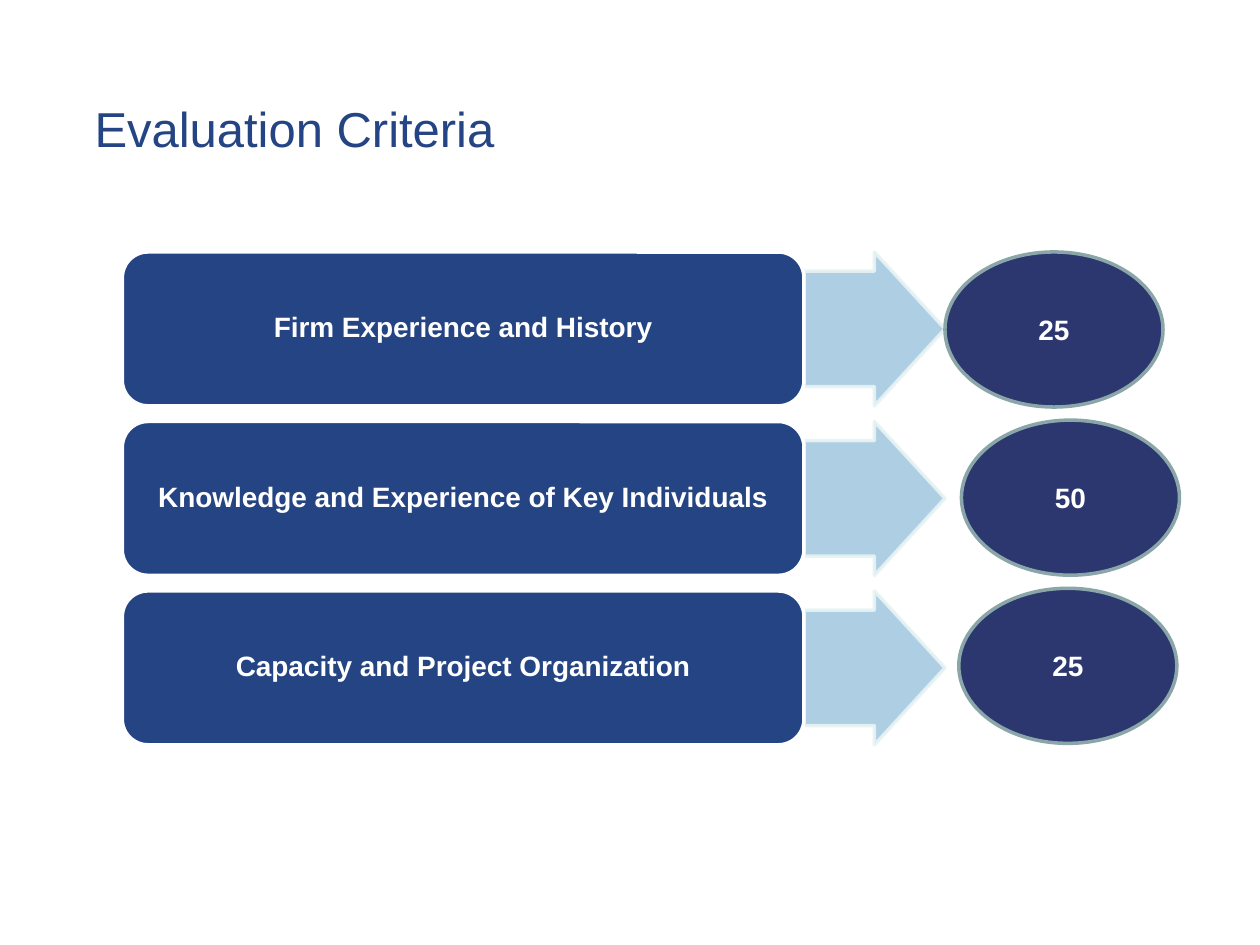
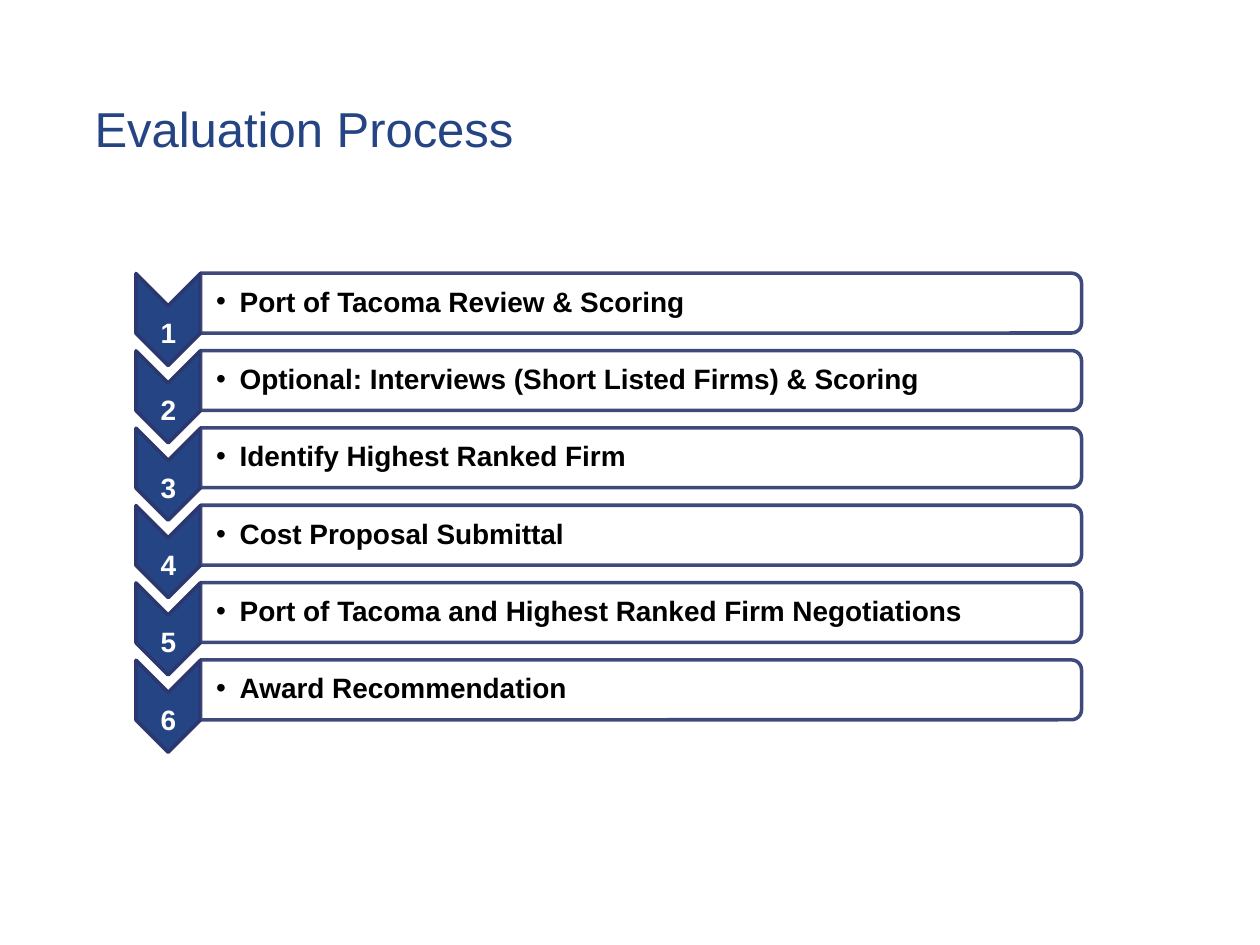
from lxml.etree import SubElement
from pptx import Presentation
from pptx.dml.color import RGBColor
from pptx.enum.shapes import MSO_SHAPE
from pptx.enum.text import MSO_ANCHOR, PP_ALIGN
from pptx.oxml.ns import qn
from pptx.util import Pt

COLORS = {
    "blue": "254484",
    "navy": "2B376E",
    "sky": "A6CAE1",
    "mist": "E7F3F4",
    "sage": "8AA6A8",
    "white": "FFFFFF",
    "black": "000000",
}
FONT = "Arial"


def add_figure(slide, preset, box, fill, line, opacity=100):
    """Draw a preset shape with a fill and a 2 pt outline."""
    figure = slide.shapes.add_shape(preset, *map(Pt, box))
    figure.shadow.inherit = False
    figure.fill.solid()
    figure.fill.fore_color.rgb = RGBColor.from_string(COLORS[fill])
    figure.line.color.rgb = RGBColor.from_string(COLORS[line])
    figure.line.width = Pt(2)
    if opacity < 100:
        for color in figure.element.spPr.iter(qn("a:srgbClr")):
            SubElement(color, qn("a:alpha"), val=str(opacity * 1000))
    return figure


def write(holder, text, color, insets, size=16, bold=True, align=PP_ALIGN.CENTER,
          anchor=MSO_ANCHOR.MIDDLE, spacing=0.9, wrap=True, bullet=False):
    """Put one formatted paragraph into a shape, text box or placeholder."""
    frame = holder.text_frame
    frame.text = text
    frame.word_wrap = wrap
    frame.vertical_anchor = anchor
    (frame.margin_left, frame.margin_top,
     frame.margin_right, frame.margin_bottom) = map(Pt, insets)
    paragraph = frame.paragraphs[0]
    paragraph.alignment = align
    paragraph.line_spacing = spacing
    paragraph.space_before = Pt(0)
    if bullet:
        properties = paragraph._p.get_or_add_pPr()
        properties.set("marL", str(Pt(13.5)))
        properties.set("indent", str(Pt(-13.5)))
        SubElement(properties, qn("a:buFont"), typeface=FONT)
        SubElement(properties, qn("a:buChar"), char="•")
    paragraph.font.name = FONT
    paragraph.font.size = Pt(size)
    paragraph.font.bold = bold
    paragraph.font.color.rgb = RGBColor.from_string(COLORS[color])


presentation = Presentation()
presentation.slide_width = Pt(720)
presentation.slide_height = Pt(540)

# Both slides share the same title style
slides = []
for heading in ("Evaluation Criteria", "Evaluation Process"):
    slide = presentation.slides.add_slide(presentation.slide_layouts[5])
    title = slide.shapes.title
    title.left, title.top, title.width, title.height = map(Pt, (54, 0, 486, 90))
    write(title, heading, "blue", (0, 0, 0, 0), size=28, bold=False, align=PP_ALIGN.LEFT,
          anchor=MSO_ANCHOR.BOTTOM, spacing=Pt(28), wrap=False)
    slides.append(slide)
criteria_slide, process_slide = slides

# Criteria: name, arrow and points; each score has its own left edge
criteria = [
    ("Firm Experience and History", "25", 540),
    ("Knowledge and Experience of Key Individuals", "50", 549.4),
    ("Capacity and Project Organization", "25", 547.9),
]
for row, (criterion, points, score_left) in enumerate(criteria):
    top = 144 + row * 96.85
    arrow = add_figure(criteria_slide, MSO_SHAPE.RIGHT_ARROW, (459.4, top, 80.6, 87.9),
                       "sky", "mist", opacity=90)
    arrow.adjustments[0] = 0.75
    name_box = add_figure(criteria_slide, MSO_SHAPE.ROUNDED_RECTANGLE,
                          (69.9, top, 389.5, 87.9), "blue", "white")
    write(name_box, criterion, "white", (5, 2, 5, 2))
    score = add_figure(criteria_slide, MSO_SHAPE.OVAL,
                       (score_left, 144 + row * 96.1, 124.6, 88.6), "navy", "sage")
    write(score, points, "white", (7.2, 3.6, 7.2, 3.6), spacing=1.0)

# Process: numbered chevrons with a bar for each step
steps = [
    "Port of Tacoma Review & Scoring",
    "Optional: Interviews (Short Listed Firms) & Scoring",
    "Identify Highest Ranked Firm",
    "Cost Proposal Submittal",
    "Port of Tacoma and Highest Ranked Firm Negotiations",
    "Award Recommendation",
]
for row, step in enumerate(steps):
    offset = row * 44.2
    chevron = add_figure(process_slide, MSO_SHAPE.CHEVRON, (69.8, 164.2 + offset, 52.6, 36.8),
                         "blue", "navy")
    chevron.rotation = 90
    number = process_slide.shapes.add_textbox(
        Pt(77.8), Pt(174.5 + offset), Pt(36.8), Pt(15.8))
    write(number, str(row + 1), "white", (0.8, 18, 0.8, 0.8))

    bar = add_figure(process_slide, MSO_SHAPE.ROUND_2_SAME_RECTANGLE,
                     (349.2, -78.5 + offset, 34.2, 503.4), "white", "navy", opacity=90)
    bar.rotation = 90
    label = process_slide.shapes.add_textbox(
        Pt(114.6), Pt(157.8 + offset), Pt(501.8), Pt(30.8))
    write(label, step, "black", (8.9, 0.8, 0.8, 0.8), align=PP_ALIGN.LEFT, bullet=True)

presentation.save("out.pptx")
